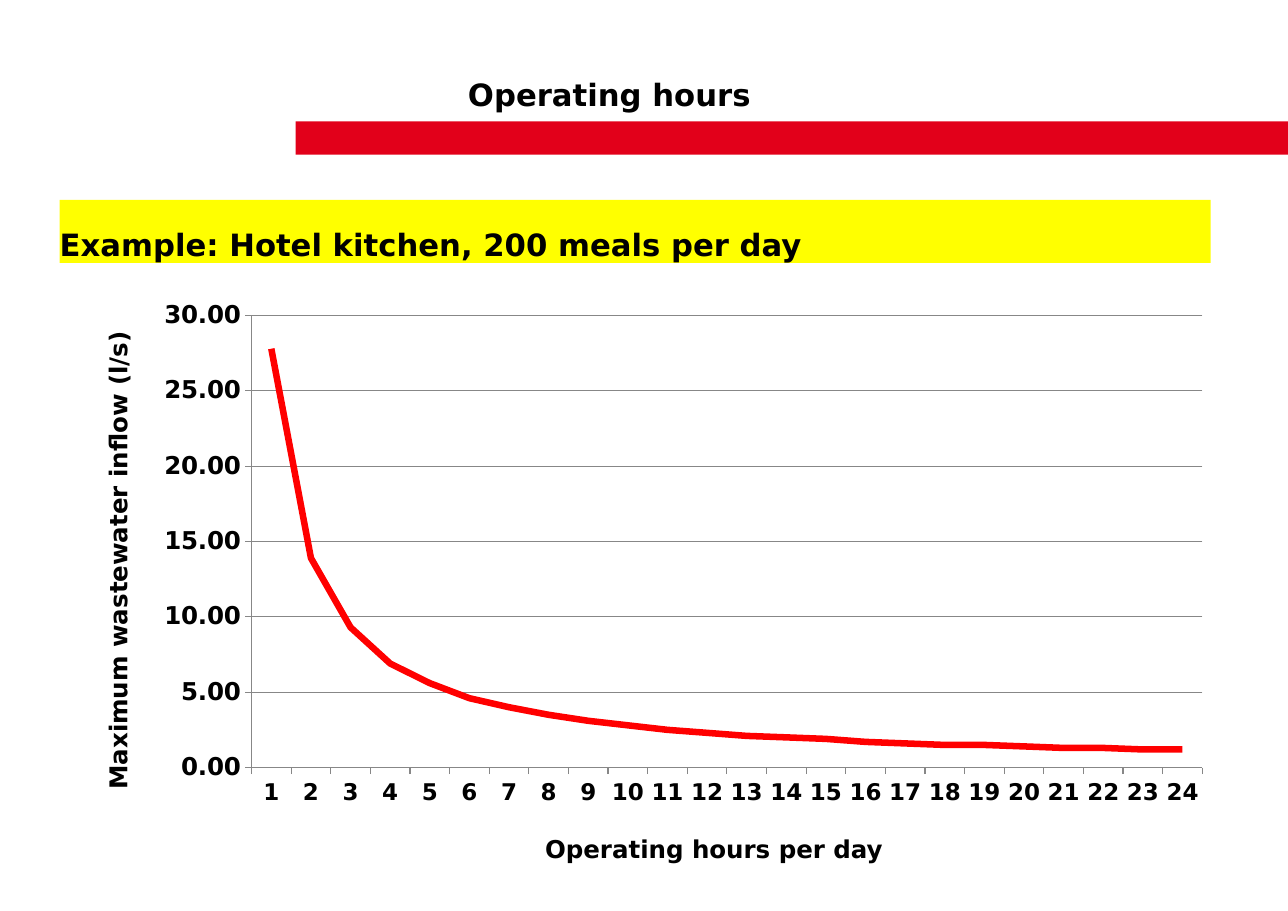
from lxml import etree
from pptx import Presentation
from pptx import util as u
from pptx.chart.data import CategoryChartData
from pptx.dml.color import RGBColor
from pptx.enum import chart as ch
from pptx.enum import shapes, text
from pptx.oxml import parse_xml
from pptx.oxml.ns import nsdecls

WIDTH, HEIGHT = u.Inches(11.67), u.Inches(8.25)
COLUMN, ROW = WIDTH / 100, HEIGHT / 100
FONT = "DejaVu Sans"
BLACK = RGBColor(0x00, 0x00, 0x00)
BAR_RED = RGBColor(0xE2, 0x00, 0x1A)
CURVE_RED = RGBColor(0xFF, 0x00, 0x00)
YELLOW = RGBColor(0xFF, 0xFF, 0x00)
GREY = RGBColor(0x87, 0x87, 0x87)
HOURS = range(1, 25)
ONE_HOUR_INFLOW = 27.78
PLOT_SHARES = {"x": 0.1, "y": 0.05, "w": 0.88, "h": 0.86}


def grid(left, top, width, height):
    """Turn columns and rows of a 100 by 100 grid into slide lengths."""
    return [round(n) for n in (left * COLUMN, top * ROW, width * COLUMN, height * ROW)]


def style_font(font, size):
    """Apply the slide's bold black type."""
    font.name, font.size, font.bold = FONT, u.Pt(size), True
    font.color.rgb = BLACK


def write(box, words, size):
    """Set one left-aligned line at the bottom of a box."""
    frame = box.text_frame
    frame.text = words
    frame.auto_size = text.MSO_AUTO_SIZE.NONE
    frame.word_wrap = True
    frame.vertical_anchor = text.MSO_ANCHOR.BOTTOM
    frame.margin_left = frame.margin_top = frame.margin_right = frame.margin_bottom = 0
    line = frame.paragraphs[0]
    line.alignment = text.PP_ALIGN.LEFT
    line.line_spacing = 1.1
    style_font(line.runs[0].font, size)


def add_band(slide, place, color):
    """Add a plain filled rectangle."""
    band = slide.shapes.add_shape(shapes.MSO_SHAPE.RECTANGLE, *grid(*place))
    band.shadow.inherit = False
    band.fill.solid()
    band.fill.fore_color.rgb = color
    band.line.fill.background()
    return band


def add_axis_label(slide, place, words, rotation=0):
    """Add the caption of a chart axis."""
    label = slide.shapes.add_textbox(*grid(*place))
    label.rotation = rotation
    write(label, words, 16)


def style_axis(axis, size):
    """Format the labels, line and ticks of an axis."""
    style_font(axis.tick_labels.font, size)
    axis.format.line.color.rgb = GREY
    axis.format.line.width = u.Pt(0.75)
    axis.major_tick_mark = ch.XL_TICK_MARK.OUTSIDE
    axis.minor_tick_mark = ch.XL_TICK_MARK.NONE


def fix_plot_area(chart):
    """Place the inner plot area by shares of the chart."""
    area = chart.plots[0]._element.getparent()
    for old in area.findall("{*}layout"):
        area.remove(old)
    layout = parse_xml(f"<c:layout {nsdecls('c')}><c:manualLayout/></c:layout>")
    settings = {"layoutTarget": "inner", "xMode": "edge", "yMode": "edge", **PLOT_SHARES}
    for name, value in settings.items():
        etree.SubElement(layout[0], etree.QName(layout, name), val=str(value))
    area.insert(0, layout)


def add_inflow_chart(slide, place):
    """Add the curve of inflow against operating hours."""
    inflow = CategoryChartData(number_format="0.00")
    inflow.categories = [str(hour) for hour in HOURS]
    inflow.add_series("Series 1", [round(ONE_HOUR_INFLOW / hour, 1) for hour in HOURS])
    frame = slide.shapes.add_chart(ch.XL_CHART_TYPE.LINE, *grid(*place), inflow)
    chart = frame.chart
    chart.has_title = chart.has_legend = False
    chart.font.name, chart.font.size = FONT, u.Pt(10)
    chart.font.color.rgb = BLACK
    chart.plots[0].vary_by_categories = False
    fix_plot_area(chart)

    curve = chart.plots[0].series[0]
    curve.smooth = False
    curve.marker.style = ch.XL_MARKER_STYLE.NONE
    curve.format.line.color.rgb = CURVE_RED
    curve.format.line.width = u.Pt(4.25)

    style_axis(chart.category_axis, 15)
    rates = chart.value_axis
    style_axis(rates, 16)
    rates.minimum_scale, rates.maximum_scale, rates.major_unit = 0, 30, 5
    rates.tick_labels.number_format = "0.00"
    rates.tick_labels.number_format_is_linked = False
    rates.has_major_gridlines = True
    rates.major_gridlines.format.line.color.rgb = GREY
    rates.major_gridlines.format.line.width = u.Pt(0.75)


def main():
    """Build the operating hours slide."""
    deck = Presentation()
    deck.slide_width, deck.slide_height = WIDTH, HEIGHT
    slide = deck.slides.add_slide(deck.slide_layouts[5])

    add_band(slide, (22.96, 13.33, 77.04, 3.64), BAR_RED)
    title = slide.shapes.title
    title.left, title.top, title.width, title.height = grid(36.33, 3.03, 61.01, 9.33)
    write(title, "Operating hours", 20)
    example = add_band(slide, (4.63, 21.94, 89.37, 6.91), YELLOW)
    write(example, "Example: Hotel kitchen, 200 meals per day", 20)

    add_axis_label(slide, (-11.74, 55.52, 39.16, 6.91), "Maximum wastewater inflow (l/s)", 270)
    add_axis_label(slide, (42.33, 90.06, 27.51, 4.73), "Operating hours per day")
    add_inflow_chart(slide, (11.14, 31.76, 83.89, 57.7))
    deck.save("out.pptx")


if __name__ == "__main__":
    main()
